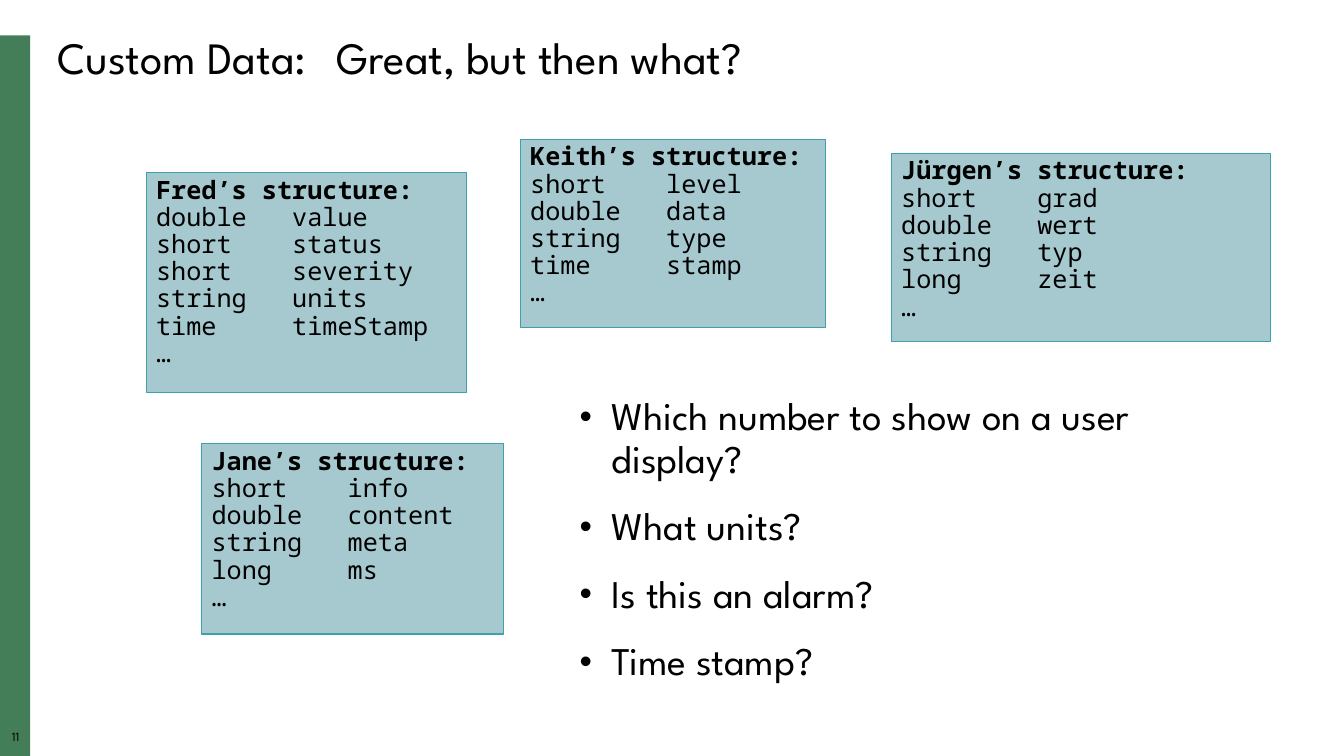
from lxml import etree
from pptx import Presentation
from pptx.dml.color import RGBColor
from pptx.enum.shapes import MSO_SHAPE
from pptx.enum.text import MSO_ANCHOR, PP_ALIGN
from pptx.oxml.ns import qn
from pptx.util import Inches, Pt

RECTANGLE = MSO_SHAPE.RECTANGLE
TOP, MIDDLE = MSO_ANCHOR.TOP, MSO_ANCHOR.MIDDLE
LEFT, CENTER = PP_ALIGN.LEFT, PP_ALIGN.CENTER

GREEN = RGBColor(0x44, 0x7E, 0x59)
PALE_TEAL = RGBColor(0xA6, 0xC9, 0xCF)
TEAL = RGBColor(0x3B, 0xA2, 0xAD)
BLACK = RGBColor(0, 0, 0)

HEADING_FONT = "League Spartan"
CODE_FONT = "Noto Sans Mono"

# Owner, box (left, top, width, height), fields (type, name)
STRUCTURES = [
    ("Fred", (1.45, 1.71, 3.18, 2.18),
     [("double", "value"), ("short", "status"), ("short", "severity"),
      ("string", "units"), ("time", "timeStamp")]),
    ("Keith", (5.16, 1.38, 3.03, 1.87),
     [("short", "level"), ("double", "data"), ("string", "type"),
      ("time", "stamp")]),
    ("Jane", (2, 4.4, 2.99, 1.89),
     [("short", "info"), ("double", "content"), ("string", "meta"),
      ("long", "ms")]),
    ("Jürgen", (8.84, 1.52, 3.76, 1.87),
     [("short", "grad"), ("double", "wert"), ("string", "typ"),
      ("long", "zeit")]),
]

QUESTIONS = [
    "Which number to show on a user display?",
    "What units?",
    "Is this an alarm?",
    "Time stamp?",
]


def add_tab_stop(paragraph, position):
    tabs = etree.SubElement(paragraph._p.get_or_add_pPr(), qn("a:tabLst"))
    etree.SubElement(tabs, qn("a:tab"), pos=str(Inches(position)), algn="l")


def add_bullet(paragraph):
    properties = paragraph._p.get_or_add_pPr()
    properties.set("marL", str(Inches(0.32)))
    properties.set("indent", str(Inches(-0.32)))
    colour = etree.SubElement(properties, qn("a:buClr"))
    etree.SubElement(colour, qn("a:srgbClr"), val=str(BLACK))
    etree.SubElement(properties, qn("a:buSzPct"), val="90000")
    etree.SubElement(properties, qn("a:buFont"), typeface="Arial")
    etree.SubElement(properties, qn("a:buChar"), char="•")


def style(paragraph, font_name, size, bold=False, align=LEFT):
    paragraph.alignment = align
    paragraph.line_spacing = 0.9
    font = paragraph.font
    font.name = font_name
    font.size = Pt(size)
    font.bold = bold
    font.color.rgb = BLACK


def add_paragraphs(frame, lines):
    """Fill an empty text frame and return its paragraphs, one per line."""
    for index, line in enumerate(lines):
        paragraph = frame.add_paragraph() if index else frame.paragraphs[0]
        paragraph.text = line
    return frame.paragraphs


def add_text_frame(slide, box, anchor=TOP):
    frame = slide.shapes.add_textbox(*map(Inches, box)).text_frame
    frame.word_wrap = True
    frame.vertical_anchor = anchor
    return frame


def add_rectangle(slide, box, fill):
    rectangle = slide.shapes.add_shape(RECTANGLE, *map(Inches, box))
    rectangle.shadow.inherit = False
    rectangle.fill.solid()
    rectangle.fill.fore_color.rgb = fill
    rectangle.line.fill.background()
    return rectangle


def add_title(slide):
    frame = add_text_frame(slide, (0.47, 0.3, 12.5, 0.59), MIDDLE)
    title, = add_paragraphs(frame, ["Custom Data:\tGreat, but then what?"])
    add_tab_stop(title, 2.77)
    style(title, HEADING_FONT, 32)


def add_page_number(slide):
    frame = add_text_frame(slide, (0, 7.25, 0.31, 0.17))
    frame.margin_left = frame.margin_right = 0
    frame.margin_top = frame.margin_bottom = 0
    number, = add_paragraphs(frame, ["11"])
    style(number, HEADING_FONT, 9, align=CENTER)


def add_structure(slide, owner, box, fields):
    card = add_rectangle(slide, box, PALE_TEAL)
    card.line.color.rgb = TEAL
    card.line.width = Pt(0.75)
    frame = card.text_frame
    frame.word_wrap = True
    frame.vertical_anchor = TOP
    field_lines = [f"{kind}\t{name}" for kind, name in fields]
    lines = [f"{owner}’s structure:", *field_lines, "…"]
    for index, paragraph in enumerate(add_paragraphs(frame, lines)):
        add_tab_stop(paragraph, 1.35)
        style(paragraph, CODE_FONT, 18, bold=index == 0)


def add_questions(slide):
    frame = add_text_frame(slide, (5.65, 3.89, 6.53, 3.1))
    for index, question in enumerate(add_paragraphs(frame, QUESTIONS)):
        add_bullet(question)
        style(question, HEADING_FONT, 28)
        if index:
            question.space_before = Pt(18)


def main():
    presentation = Presentation()
    presentation.slide_width = Inches(13.33)
    presentation.slide_height = Inches(7.5)
    slide = presentation.slides.add_slide(presentation.slide_layouts[6])

    add_rectangle(slide, (0, 0.35, 0.3, 7.15), GREEN)
    add_page_number(slide)
    add_title(slide)
    for owner, box, fields in STRUCTURES:
        add_structure(slide, owner, box, fields)
    add_questions(slide)

    presentation.save("out.pptx")


if __name__ == "__main__":
    main()
